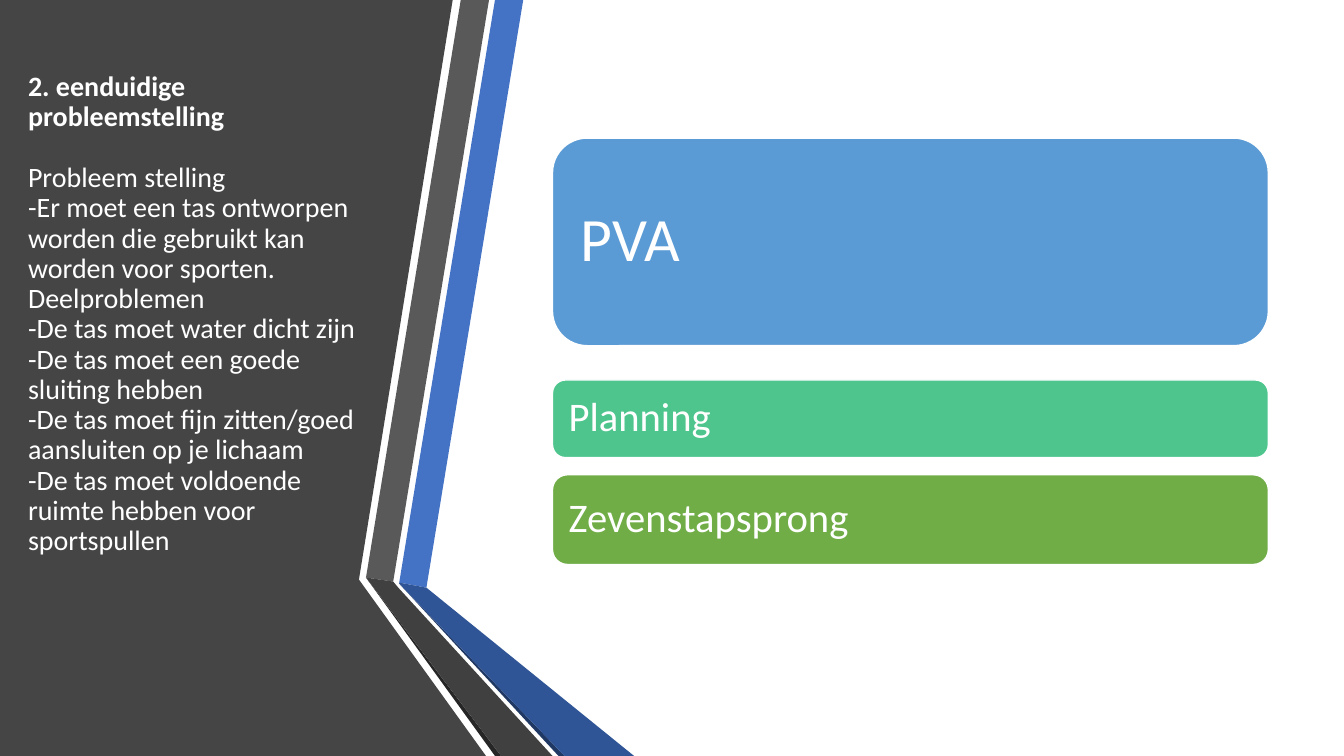
from pptx import Presentation
from pptx.dml.color import RGBColor
from pptx.enum.shapes import MSO_SHAPE
from pptx.enum.text import MSO_ANCHOR, PP_ALIGN
from pptx.util import Inches, Pt

W, H = 13.33, 7.5
FONT = "Calibri"
WHITE = "FFFFFF"

# Outlines of the folded ribbons: colour, then corner points in inches
PANEL = ("454545", [(0, 0), (4.49, 0), (3.56, 5.75), (4.82, H), (0, H)])
RIBBONS = [
    ("4472C4", [(3.96, 5.78), (4.23, 5.83), (5.19, 0), (4.91, 0)]),
    ("595959", [(4.85, 0), (4.57, 0), (3.63, 5.73), (3.9, 5.77)]),
    ("262626", [(3.63, 5.73), (4.91, H), (4.97, H)]),
    ("203864", [(3.96, 5.79), (5.54, H), (5.6, H)]),
    ("2F5597", [(3.96, 5.78), (3.96, 5.79), (5.6, H), (6.29, H), (4.23, 5.83)]),
    ("404040", [(3.63, 5.73), (4.97, H), (5.48, H), (3.95, 5.83), (3.9, 5.77)]),
]

HEADING = "2. eenduidige probleemstelling"
PROBLEM_LINES = [
    "Probleem stelling",
    "-Er moet een tas ontworpen worden die gebruikt kan worden voor sporten.",
    "Deelproblemen",
    "-De tas moet water dicht zijn",
    "-De tas moet een goede sluiting hebben",
    "-De tas moet fijn zitten/goed aansluiten op je lichaam",
    "-De tas moet voldoende ruimte hebben voor sportspullen",
]

# Cards: text, top, height, colour, font size, left inset
CARD_LEFT, CARD_WIDTH = 5.48, 7.1
CARDS = [
    ("PVA", 1.37, 2.06, "5B9BD5", 44, 0.28),
    ("Planning", 3.77, 0.77, "4DC58D", 29, 0.16),
    ("Zevenstapsprong", 4.71, 0.89, "70AD47", 29, 0.16),
]


def color(value):
    return RGBColor.from_string(value)


def paint(sp, fill):
    sp.shadow.inherit = False
    sp.fill.solid()
    sp.fill.fore_color.rgb = color(fill)


def style(p, size, bold=False):
    p.alignment = PP_ALIGN.LEFT
    p.line_spacing = 0.9
    p.font.name = FONT
    p.font.size = Pt(size)
    p.font.bold = bold
    p.font.color.rgb = color(WHITE)


def add_outline(s, fill, points):
    corners = [(Inches(x), Inches(y)) for x, y in points]
    builder = s.shapes.build_freeform(*corners[0])
    builder.add_line_segments(corners[1:], close=True)
    sp = builder.convert_to_shape()
    paint(sp, fill)
    sp.line.fill.background()


def add_problem_text(s):
    sp = s.shapes.add_textbox(Inches(0.18), Inches(0.2), Inches(3.63), Inches(6.14))
    tf = sp.text_frame
    tf.word_wrap = True
    tf.vertical_anchor = MSO_ANCHOR.MIDDLE
    tf.margin_bottom = Inches(0.35)
    p = tf.paragraphs[0]
    p.text = HEADING
    style(p, 20, bold=True)
    p.space_after = Pt(22)
    for line in PROBLEM_LINES:
        p = tf.add_paragraph()
        p.text = line
        style(p, 20)


def add_card(s, text, top, height, fill, size, inset):
    sp = s.shapes.add_shape(MSO_SHAPE.ROUNDED_RECTANGLE, Inches(CARD_LEFT),
                            Inches(top), Inches(CARD_WIDTH), Inches(height))
    paint(sp, fill)
    sp.line.color.rgb = color(WHITE)
    sp.line.width = Pt(1)
    tf = sp.text_frame
    tf.word_wrap = True
    tf.vertical_anchor = MSO_ANCHOR.MIDDLE
    # The rounded rectangle insets its text area by part of the corner radius
    corner = 0.29 * min(height, CARD_WIDTH) / 6
    tf.margin_left = Inches(max(inset - corner, 0))
    p = tf.paragraphs[0]
    p.text = text
    style(p, size)


def main():
    prs = Presentation()
    prs.slide_width, prs.slide_height = Inches(W), Inches(H)
    s = prs.slides.add_slide(prs.slide_layouts[6])

    # Dark panel and folded ribbons
    for fill, points in [PANEL, *RIBBONS]:
        add_outline(s, fill, points)

    # Problem statement on the panel
    add_problem_text(s)

    # Cards on the right
    for card in CARDS:
        add_card(s, *card)

    prs.save("out.pptx")


if __name__ == "__main__":
    main()
